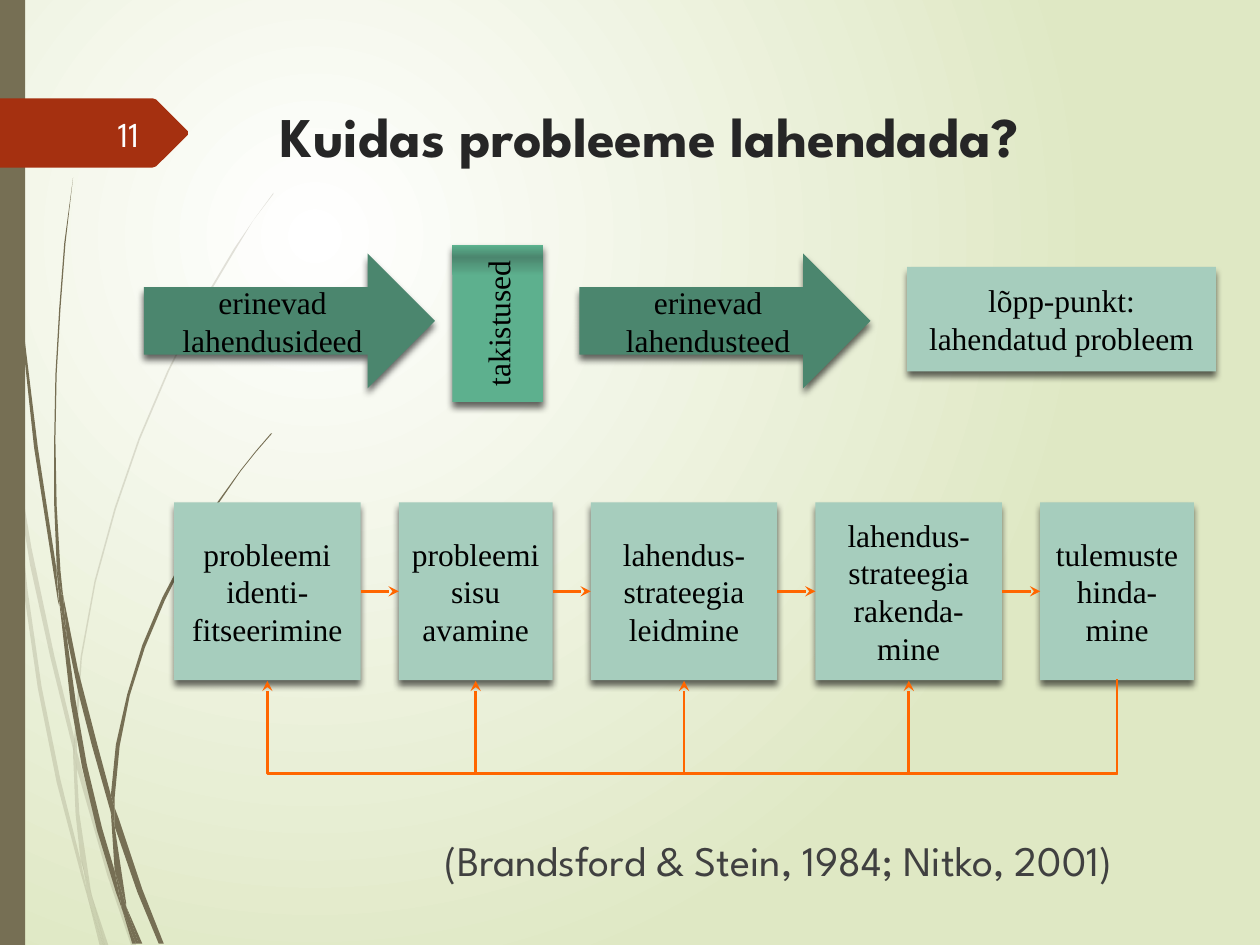
from copy import deepcopy

from lxml.etree import SubElement
from pptx import Presentation
from pptx.dml.color import RGBColor
from pptx.enum.shapes import MSO_CONNECTOR, MSO_SHAPE
from pptx.enum.text import MSO_ANCHOR, PP_ALIGN
from pptx.oxml.ns import qn
from pptx.util import Cm, Pt

THEME = {
    "olive": "766F54", "red": "A53010", "mint": "A6CDBD", "green": "4B866E",
    "orange": "FF6600", "black": "000000", "ink": "262626", "grey": "404040",
    "white": "FEFFFF",
    "background": [(0, "FFFFFF"), (1, "DFE8C4")],
    "obstacle": [(0.8, "5DB08E"), (0.92, "4B866E"), (1, "5CB38F")],
    "title": {"name": "League Spartan", "size": Pt(32), "bold": True},
    "source": {"name": "League Spartan", "size": Pt(24)},
    "number": {"name": "League Spartan", "size": Pt(20)},
    "box": {"name": "Times New Roman", "size": Pt(18)},
}

TITLE = ("Kuidas probleeme lahendada?", (5.41, 1.73, 18.31, 1.98))
PAGE_NUMBER = ("11", (1.42, 2.18, 1.63, 1.02))
SOURCE = ("(Brandsford & Stein, 1984; Nitko, 2001)", (8.71, 16.54, 16, 1.6))

# Text, preset, fill, box in cm
PATH_TO_SOLUTION = [
    ("lõpp-punkt: lahendatud probleem", MSO_SHAPE.RECTANGLE, "mint", (18.29, 5.38, 6.22, 2.11)),
    ("erinevad lahendusideed", MSO_SHAPE.RIGHT_ARROW, "green", (2.9, 5.11, 5.87, 2.72)),
    ("erinevad lahendusteed", MSO_SHAPE.RIGHT_ARROW, "green", (11.68, 5.11, 5.87, 2.72)),
    ("takistused", MSO_SHAPE.RECTANGLE, "obstacle", (9.12, 4.93, 1.83, 3.18)),
]

# Text, width in cm
STEPS = [
    ("probleemi identi-fitseerimine", 3.76),
    ("probleemi sisu avamine", 3.1),
    ("lahendus-strateegia leidmine", 3.76),
    ("lahendus-strateegia rakenda-mine", 3.76),
    ("tulemuste\vhinda-mine", 3.1),
]
STEP_LEFT, STEP_TOP, STEP_HEIGHT, STEP_GAP = 3.51, 10.13, 3.58, 0.77
RETURN_DROP, RETURN_THICKNESS = 1.9, 0.03

# Outlines on a grid of GRID cm
GRID = 0.0254
FAINT_STALKS = [
    [(8, 350), (6, 322), (0, 282), (0, 299), (7, 344)],
    [(40, 522), (59, 599), (59, 586), (43, 520), (25, 435), (10, 345), (12, 376), (24, 449)],
    [(64, 607), (61, 596), (61, 610), (85, 694), (104, 750), (108, 750), (88, 692)],
    [(83, 750), (86, 750), (73, 711)],
    [(64, 683), (48, 619), (33, 545), (22, 469), (12, 376), (8, 350), (19, 470), (30, 546),
     (45, 621), (64, 693), (70, 714), (69, 707)],
    [(58, 599), (60, 646), (64, 683), (67, 692), (73, 711), (72, 706), (63, 646), (61, 610),
     (61, 608)],
    [(61, 584), (65, 522), (76, 462), (92, 404), (111, 349), (134, 295), (159, 245), (187, 198),
     (201, 175), (217, 154), (217, 153), (201, 175), (186, 197), (158, 244), (133, 294),
     (110, 348), (91, 403), (75, 461), (64, 521), (59, 584), (59, 586), (61, 596)],
    [(70, 714), (79, 750), (82, 750)],
    [(61, 608), (61, 610), (61, 596), (59, 586), (58, 599)],
    [(67, 692), (65, 683), (69, 707), (70, 714), (82, 750), (83, 750), (73, 711)],
]
DARK_STALKS = [
    [(5, 110), (14, 233), (27, 355), (46, 477), (47, 481), (45, 457), (45, 453), (30, 355),
     (15, 232), (6, 109), (4, 48), (3, 0), (2, 0), (3, 48)],
    [(73, 592), (88, 645), (88, 633), (88, 631), (77, 590), (62, 532), (50, 472), (53, 505),
     (62, 549)],
    [(94, 649), (91, 641), (91, 656), (109, 708), (126, 749), (130, 749), (113, 706)],
    [(91, 691), (81, 657), (69, 607), (60, 556), (53, 505), (47, 477), (56, 557), (65, 608),
     (77, 659), (92, 708), (97, 722), (96, 717)],
    [(50, 472), (48, 453), (45, 401), (44, 349), (45, 297), (48, 245), (52, 193), (58, 141),
     (51, 193), (47, 245), (44, 297), (43, 349), (43, 400), (45, 449), (49, 472)],
    [(110, 749), (113, 749), (100, 719)],
    [(47, 477), (53, 505), (50, 472), (49, 472), (45, 449), (45, 453)],
    [(91, 633), (95, 592), (103, 552), (115, 514), (131, 476), (149, 440), (169, 406),
     (191, 374), (203, 359), (216, 344), (215, 344), (203, 358), (191, 373), (168, 405),
     (148, 438), (129, 474), (113, 512), (101, 551), (92, 591), (88, 631), (91, 641)],
    [(97, 722), (105, 749), (108, 749)],
    [(88, 645), (91, 691), (96, 706), (100, 719), (100, 716), (91, 656), (90, 651)],
    [(88, 645), (90, 651), (91, 656), (91, 641), (88, 631), (88, 633)],
    [(96, 706), (91, 691), (96, 717), (97, 722), (108, 749), (110, 749), (100, 719)],
]
PAGE_TAG = [(0, 78), (121, 78), (124, 79), (149, 104), (149, 107), (124, 132), (121, 133), (0, 133)]


def cm_box(box):
    return [Cm(length) for length in box]


def apply_formats(target, formats):
    for attribute, value in formats.items():
        setattr(target, attribute, value)


def fill_gradient(fill, stops):
    fill.gradient()
    stop_list = fill._fill._gradFill.find(qn("a:gsLst"))
    while len(stop_list) < len(stops):
        stop_list.append(deepcopy(stop_list[-1]))
    for stop, (position, color) in zip(fill.gradient_stops, stops):
        stop.position = position
        stop.color.rgb = RGBColor.from_string(color)


def paint(shape, color, alpha=None):
    """Solid or gradient fill from the theme, no line, no shadow."""
    shape.shadow.inherit = False
    shape.line.fill.background()
    if isinstance(THEME[color], list):
        fill_gradient(shape.fill, THEME[color])
        shape.fill.gradient_angle = 90
        return
    shape.fill.solid()
    shape.fill.fore_color.rgb = RGBColor.from_string(THEME[color])
    if alpha:
        rgb = shape._element.spPr.find(f"{qn('a:solidFill')}/{qn('a:srgbClr')}")
        SubElement(rgb, qn("a:alpha"), val=str(alpha * 1000))


def write(shape, text, style, color, align):
    frame = shape.text_frame
    apply_formats(frame, {"text": text, "word_wrap": True, "vertical_anchor": MSO_ANCHOR.MIDDLE})
    paragraph = frame.paragraphs[0]
    paragraph.alignment = align
    for run in paragraph.runs:
        apply_formats(run.font, THEME[style])
        run.font.color.rgb = RGBColor.from_string(THEME[color])


def add_outline(shapes, points, color, alpha=None):
    builder = shapes.build_freeform(*points[0], scale=Cm(GRID))
    builder.add_line_segments(points[1:], close=True)
    paint(builder.convert_to_shape(), color, alpha)


def add_box(shapes, text, preset, color, box):
    shape = shapes.add_shape(preset, *cm_box(box))
    paint(shape, color)
    effects = shape._element.spPr.find(qn("a:effectLst"))
    shadow = SubElement(effects, qn("a:outerShdw"), blurRad=str(Pt(4)), dist=str(Pt(3)),
                        dir="5400000", algn="ctr", rotWithShape="0")
    rgb = SubElement(shadow, qn("a:srgbClr"), val=THEME["black"])
    SubElement(rgb, qn("a:alpha"), val="60000")
    write(shape, text, "box", "black", PP_ALIGN.CENTER)
    return shape


def add_link(shapes, kind, begin, begin_side, end, end_side):
    link = shapes.add_connector(kind, 0, 0, 0, 0)
    link.begin_connect(begin, begin_side)
    link.end_connect(end, end_side)
    link.line.color.rgb = RGBColor.from_string(THEME["orange"])
    link.line.width = Pt(1.5)
    SubElement(link.line._get_or_add_ln(), qn("a:tailEnd"), type="stealth")
    SubElement(link._element.spPr, qn("a:effectLst"))
    return link


def add_return(shapes, last, step):
    """Elbow from under the last step, down and back up to an earlier step."""
    link = add_link(shapes, MSO_CONNECTOR.ELBOW, last, 2, step, 2)
    right, left = (box.left + box.width // 2 for box in (last, step))
    middle, span = (right + left) // 2, right - left
    bottom, thickness = step.top + step.height, Cm(RETURN_THICKNESS)
    apply_formats(link, {
        "begin_x": middle - thickness // 2, "end_x": middle + thickness // 2,
        "begin_y": bottom - span // 2, "end_y": bottom + span // 2, "rotation": 90,
    })
    guides = link._element.spPr.find(qn("a:prstGeom")).get_or_add_avLst()
    bend = round(RETURN_DROP / RETURN_THICKNESS * 100000)
    SubElement(guides, qn("a:gd"), name="adj1", fmla=f"val {bend}")


def main():
    deck = Presentation()
    deck.slide_width, deck.slide_height = Cm(25.4), Cm(19.05)
    slide = deck.slides.add_slide(deck.slide_layouts[5])
    shapes = slide.shapes

    backdrop = slide.background.fill
    fill_gradient(backdrop, THEME["background"])
    gradient = backdrop._fill._gradFill
    gradient.remove(gradient.find(qn("a:lin")))
    glow = SubElement(gradient, qn("a:path"), path="circle")
    SubElement(glow, qn("a:fillToRect"), l="50000", t="50000", r="100000", b="100000")

    for stalk in FAINT_STALKS:
        add_outline(shapes, stalk, "olive", 20)
    for stalk in DARK_STALKS:
        add_outline(shapes, stalk, "olive")
    paint(shapes.add_shape(MSO_SHAPE.RECTANGLE, *cm_box((0, 0, 0.51, 19.05))), "olive")
    add_outline(shapes, PAGE_TAG, "red")

    title_text, title_box = TITLE
    places = dict(zip(("left", "top", "width", "height"), cm_box(title_box)))
    apply_formats(shapes.title, places)
    write(shapes.title, title_text, "title", "ink", PP_ALIGN.LEFT)
    for (text, box), style, color, align in (
        (PAGE_NUMBER, "number", "white", PP_ALIGN.RIGHT),
        (SOURCE, "source", "grey", PP_ALIGN.LEFT),
    ):
        write(shapes.add_textbox(*cm_box(box)), text, style, color, align)

    for part in PATH_TO_SOLUTION:
        obstacle = add_box(shapes, *part)
    obstacle.text_frame._txBody.bodyPr.set("vert", "vert270")

    steps, left = [], STEP_LEFT
    for text, width in STEPS:
        place = (left, STEP_TOP, width, STEP_HEIGHT)
        steps.append(add_box(shapes, text, MSO_SHAPE.RECTANGLE, "mint", place))
        left += width + STEP_GAP
    for step, following in zip(steps, steps[1:]):
        add_link(shapes, MSO_CONNECTOR.STRAIGHT, step, 3, following, 1)
    for step in steps[:-1]:
        add_return(shapes, steps[-1], step)

    deck.save("out.pptx")


if __name__ == "__main__":
    main()
